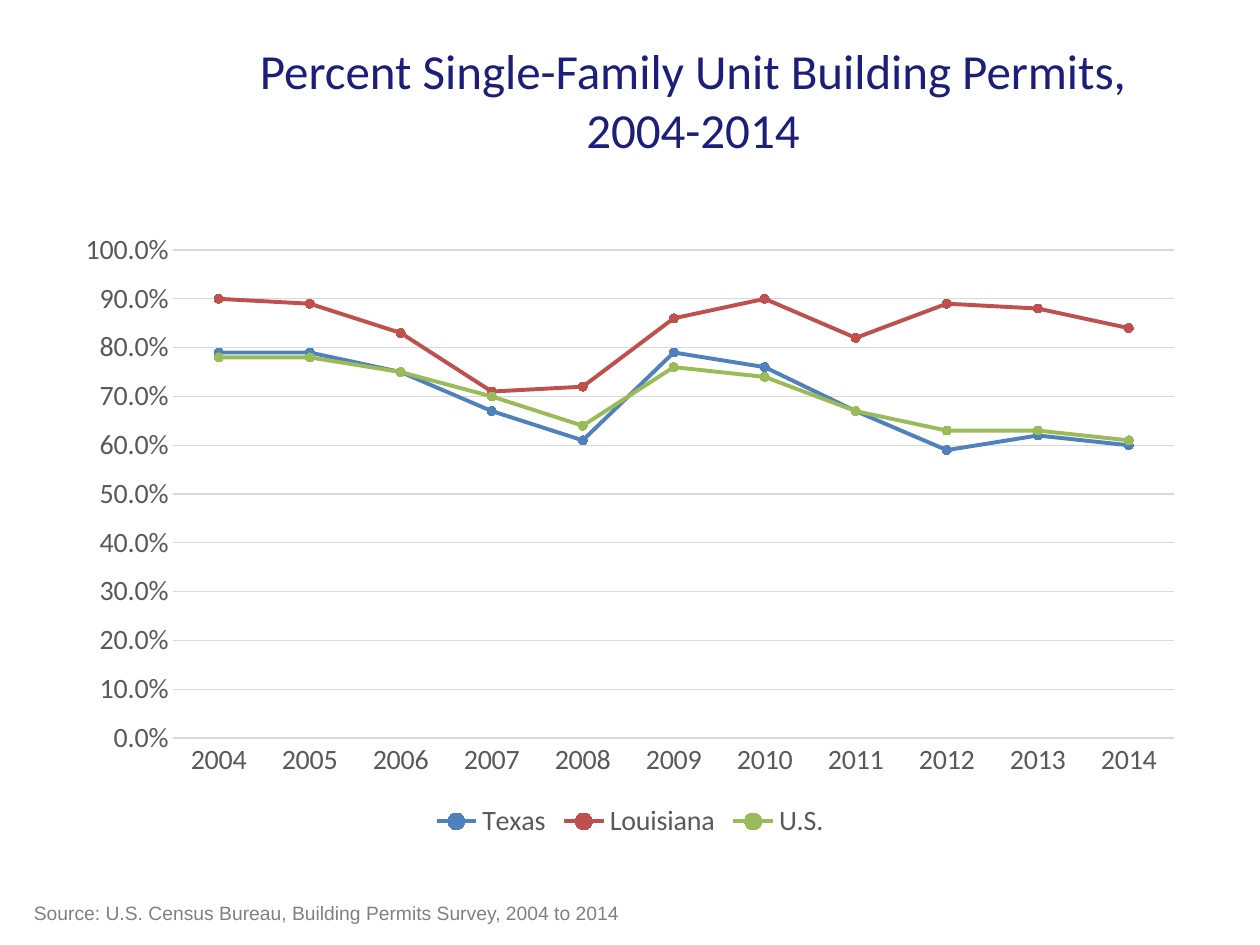
from dataclasses import dataclass

from pptx import Presentation
from pptx.chart.data import CategoryChartData
from pptx.dml.color import RGBColor as RGB
from pptx.enum.chart import (
    XL_CHART_TYPE as ChartType,
    XL_LEGEND_POSITION as LegendPos,
    XL_MARKER_STYLE as Marker,
    XL_TICK_MARK as Tick,
)
from pptx.enum.text import MSO_ANCHOR as Anchor, PP_ALIGN as Align
from pptx.util import Inches, Pt


@dataclass(frozen=True)
class Theme:
    """Colours, fonts and sizes of the slide."""
    title: str = "1B1E7A"
    label: str = "595959"
    grid: str = "D9D9D9"
    source: str = "808080"
    series: tuple = ("4F81BD", "C0504D", "9BBB59")
    head_font: str = "Calibri"
    source_font: str = "Arial"
    title_size: int = 28
    label_size: int = 16
    source_size: int = 11
    grid_width: float = 0.75
    series_width: float = 2.25
    marker_size: int = 5


THEME = Theme()
YEARS = [str(year) for year in range(2004, 2015)]
PERMITS = {
    "Texas": (0.79, 0.79, 0.75, 0.67, 0.61, 0.79, 0.76, 0.67, 0.59, 0.62, 0.6),
    "Louisiana": (0.9, 0.89, 0.83, 0.71, 0.72, 0.86, 0.9, 0.82, 0.89, 0.88, 0.84),
    "U.S.": (0.78, 0.78, 0.75, 0.7, 0.64, 0.76, 0.74, 0.67, 0.63, 0.63, 0.61),
}


def style_font(font, name, size, color):
    """Set the typeface, size and colour of a font."""
    font.name, font.size = name, Pt(size)
    font.color.rgb = RGB.from_string(color)


def style_line(line, color, width):
    """Set the colour and width of a line."""
    line.color.rgb = RGB.from_string(color)
    line.width = Pt(width)


def add_text(s, text, box, *, font, size, color, align=Align.LEFT,
             anchor=Anchor.TOP, wrap=True):
    """Add a text box holding one formatted paragraph."""
    tf = s.shapes.add_textbox(*map(Inches, box)).text_frame
    tf.word_wrap, tf.vertical_anchor = wrap, anchor
    p = tf.paragraphs[0]
    p.alignment = align
    r = p.add_run()
    r.text = text
    style_font(r.font, font, size, color)


def style_axes(chart):
    """Format the year axis, the percent axis and its gridlines."""
    for axis in (chart.category_axis, chart.value_axis):
        axis.major_tick_mark = axis.minor_tick_mark = Tick.NONE
        style_font(axis.tick_labels.font, THEME.head_font, THEME.label_size, THEME.label)
    style_line(chart.category_axis.format.line, THEME.grid, THEME.grid_width)
    values = chart.value_axis
    values.minimum_scale, values.maximum_scale, values.major_unit = 0, 1, 0.1
    values.tick_labels.number_format = "0.0%"
    values.tick_labels.number_format_is_linked = False
    values.format.line.fill.background()
    style_line(values.major_gridlines.format.line, THEME.grid, THEME.grid_width)


def style_series(series, color):
    """Format one line and its round markers."""
    series.smooth = False
    style_line(series.format.line, color, THEME.series_width)
    marker = series.marker
    marker.style, marker.size = Marker.CIRCLE, THEME.marker_size
    marker.format.fill.solid()
    marker.format.fill.fore_color.rgb = RGB.from_string(color)
    marker.format.line.color.rgb = RGB.from_string(color)


def add_line_chart(s, box):
    """Add the permits chart with its legend below."""
    data = CategoryChartData(number_format="0.0%")
    data.categories = YEARS
    for name, values in PERMITS.items():
        data.add_series(name, values)
    chart = s.shapes.add_chart(ChartType.LINE_MARKERS, *map(Inches, box), data).chart
    chart.has_title = False
    style_font(chart.font, THEME.head_font, THEME.label_size, THEME.label)
    chart.has_legend = True
    chart.legend.position = LegendPos.BOTTOM
    chart.legend.include_in_layout = False
    style_font(chart.legend.font, THEME.head_font, THEME.label_size, THEME.label)
    style_axes(chart)
    chart.plots[0].vary_by_categories = False
    for series, color in zip(chart.plots[0].series, THEME.series):
        style_series(series, color)


def main():
    """Build and save the slide."""
    prs = Presentation()
    prs.slide_width, prs.slide_height = Inches(10), Inches(7.5)
    s = prs.slides.add_slide(prs.slide_layouts[6])
    add_text(s, "Percent Single-Family Unit Building Permits, 2004-2014",
             (1.75, 0.25, 7.5, 1.08), font=THEME.head_font, size=THEME.title_size,
             color=THEME.title, align=Align.CENTER, anchor=Anchor.MIDDLE)
    add_line_chart(s, (0.5, 1.75, 9, 4.95))
    add_text(s, "Source: U.S. Census Bureau, Building Permits Survey, 2004 to 2014",
             (0.17, 7.1, 4.89, 0.29), font=THEME.source_font, size=THEME.source_size,
             color=THEME.source, wrap=False)
    prs.save("out.pptx")


if __name__ == "__main__":
    main()
